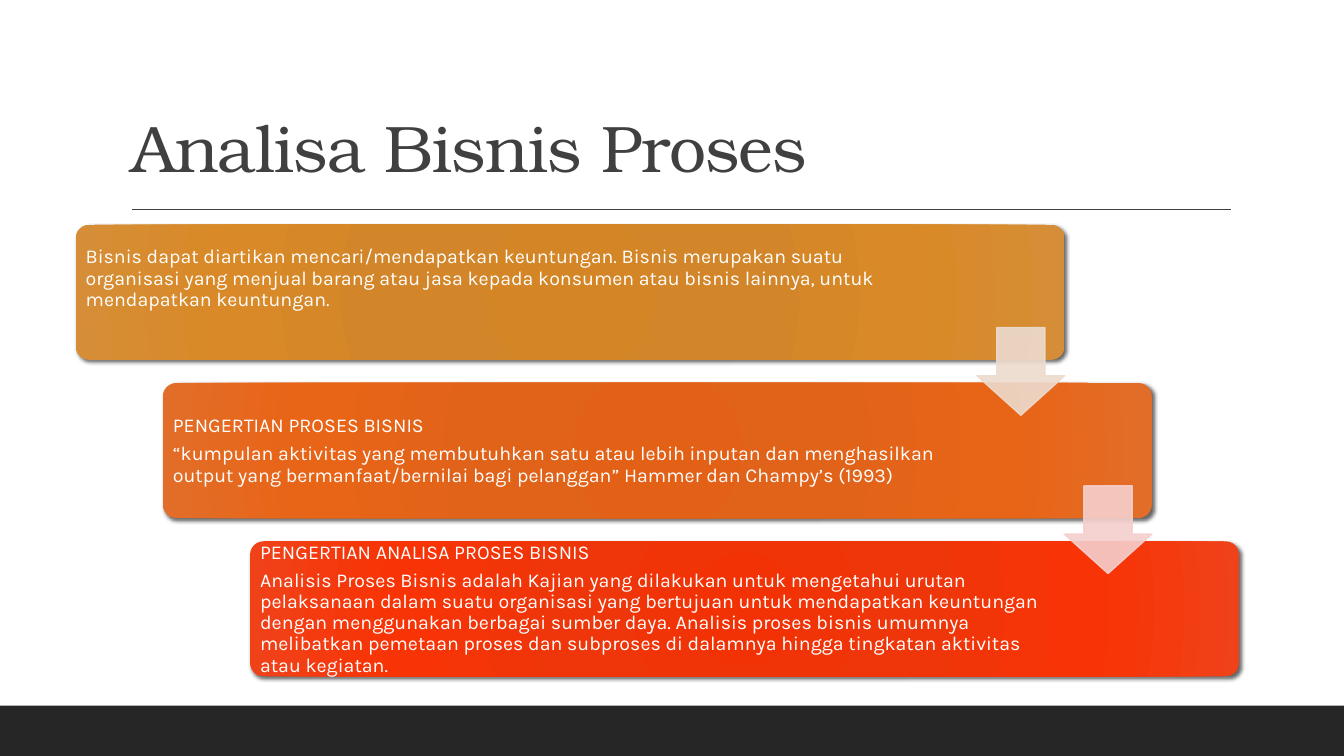
from pptx import Presentation
from pptx import util as u
from pptx.dml.color import RGBColor
from pptx.enum import shapes, text
from pptx.oxml import parse_xml
from pptx.oxml.ns import nsdecls, qn

WHITE = RGBColor(0xFF, 0xFF, 0xFF)
FOOTER_BAND = RGBColor(0x26, 0x26, 0x26)
TITLE_GREY = RGBColor(0x40, 0x40, 0x40)
AMBER = [RGBColor.from_string(c) for c in ("D48526", "D38629", "D98927", "D58E37")]
ORANGE = [RGBColor.from_string(c) for c in ("E36116", "E1631A", "E86416", "E26D28")]
RED = [RGBColor.from_string(c) for c in ("F23205", "EF360A", "F83305", "F04219")]
ARROW_COLORS = [RGBColor(0xED, 0xDB, 0xCE), RGBColor(0xF5, 0xCF, 0xCD)]
GRADIENT_STOPS = (0, 34, 70, 100)

TITLE_FONT, BODY_FONT = "TeX Gyre Bonum", "Karla"
CARD_WIDTH, CARD_HEIGHT = 9.81, 1.34
STEP_X, STEP_Y = 0.865, 1.57
ARROW_SIZE, ARROW_DROP = 0.87, 1.02
INSET = 0.06

# Card colours, text width, bottom inset, paragraphs
CARDS = [
    (AMBER, 8.36, 0.34, [
        "Bisnis dapat diartikan mencari/mendapatkan keuntungan. Bisnis merupakan suatu "
        "organisasi yang menjual barang atau jasa kepada konsumen atau bisnis lainnya, "
        "untuk mendapatkan keuntungan."]),
    (ORANGE, 8, INSET, [
        "PENGERTIAN PROSES BISNIS",
        "“kumpulan aktivitas yang membutuhkan satu atau lebih inputan dan menghasilkan "
        "output yang bermanfaat/bernilai bagi pelanggan” Hammer dan Champy’s (1993)"]),
    (RED, 8, INSET, [
        "PENGERTIAN ANALISA PROSES BISNIS",
        "Analisis Proses Bisnis adalah Kajian yang dilakukan untuk mengetahui urutan "
        "pelaksanaan dalam suatu organisasi yang bertujuan untuk mendapatkan keuntungan "
        "dengan menggunakan berbagai sumber daya. Analisis proses bisnis umumnya "
        "melibatkan pemetaan proses dan subproses di dalamnya hingga tingkatan aktivitas "
        "atau kegiatan."]),
]


def inches(*lengths):
    return [u.Inches(length) for length in lengths]


def add_radial_fill(shape, colors):
    stops = "".join(
        f'<a:gs pos="{position * 1000}"><a:srgbClr val="{color}"/></a:gs>'
        for position, color in zip(GRADIENT_STOPS, colors))
    gradient = parse_xml(
        f'<a:gradFill {nsdecls("a")} rotWithShape="1"><a:gsLst>{stops}</a:gsLst>'
        '<a:path path="circle"><a:fillToRect l="100000" t="100000" r="100000" b="100000"/>'
        '</a:path></a:gradFill>')
    shape._element.spPr.find(qn("a:prstGeom")).addnext(gradient)


def add_shadow(shape):
    shape._element.spPr.append(parse_xml(
        f'<a:effectLst {nsdecls("a")}><a:outerShdw blurRad="38100" dist="25400" '
        'dir="2700000" rotWithShape="0"><a:srgbClr val="000000"><a:alpha val="60000"/>'
        '</a:srgbClr></a:outerShdw></a:effectLst>'))


def add_frame(page, left, top, width, height):
    """Footer band, title and the rule beneath it."""
    band = page.shapes.add_shape(shapes.MSO_SHAPE.RECTANGLE,
                                 *inches(left, top + height - 0.5, width, 0.5))
    band.shadow.inherit = False
    band.fill.solid()
    band.fill.fore_color.rgb = FOOTER_BAND
    band.line.fill.background()

    rule = page.shapes.add_connector(
        shapes.MSO_CONNECTOR.STRAIGHT,
        *inches(left + 1.31, top + 2.08, left + 12.21, top + 2.08))
    rule.line.color.rgb = TITLE_GREY
    rule.line.width = u.Pt(1)
    rule._element.spPr.append(parse_xml(f'<a:effectLst {nsdecls("a")}/>'))

    title = page.shapes.title
    title.left, title.top, title.width, title.height = inches(left + 1.2, top + 0.31, 11, 1.59)
    frame = title.text_frame
    frame.text = "Analisa Bisnis Proses"
    frame.auto_size = text.MSO_AUTO_SIZE.NONE
    frame.vertical_anchor = text.MSO_ANCHOR.BOTTOM
    para = frame.paragraphs[0]
    para.alignment = text.PP_ALIGN.LEFT
    para.line_spacing = 0.9
    para.font.name, para.font.size = TITLE_FONT, u.Pt(47)
    para.font.color.rgb = TITLE_GREY
    para.runs[0]._r.get_or_add_rPr().set("spc", "-50")


def add_card(page, left, top, colors, text_width, bottom_inset, paragraphs):
    card = page.shapes.add_shape(shapes.MSO_SHAPE.ROUNDED_RECTANGLE,
                                 *inches(left, top, CARD_WIDTH, CARD_HEIGHT))
    card.adjustments[0] = 0.1
    add_radial_fill(card, colors)
    card.line.fill.background()
    add_shadow(card)

    box = page.shapes.add_textbox(*inches(left + 0.04, top + 0.04, text_width, 1.27))
    frame = box.text_frame
    frame.word_wrap = True
    frame.vertical_anchor = text.MSO_ANCHOR.MIDDLE
    frame.margin_left = frame.margin_right = frame.margin_top = u.Inches(INSET)
    frame.margin_bottom = u.Inches(bottom_inset)
    frame.text = "\n".join(paragraphs)
    for para in frame.paragraphs:
        para.line_spacing = 0.9
        para.space_after = u.Pt(4.9)
        para.font.name, para.font.size = BODY_FONT, u.Pt(14)
        para.font.color.rgb = WHITE


def add_arrow(page, left, top, color):
    arrow = page.shapes.add_shape(shapes.MSO_SHAPE.DOWN_ARROW,
                                  *inches(left, top, ARROW_SIZE, ARROW_SIZE))
    arrow.adjustments[0], arrow.adjustments[1] = 0.55, 0.45
    arrow.shadow.inherit = False
    arrow.fill.solid()
    arrow.fill.fore_color.rgb = color
    arrow.line.color.rgb = color
    arrow.line.width = u.Pt(1)
    for tint in arrow._element.spPr.iter(qn("a:srgbClr")):
        tint.append(parse_xml(f'<a:alpha {nsdecls("a")} val="90000"/>'))


def add_staircase(page, left, top):
    """Cards stepping down to the right, joined by arrows."""
    for index, card in enumerate(CARDS):
        add_card(page, left + index * STEP_X, top + index * STEP_Y, *card)
    for index, color in enumerate(ARROW_COLORS):
        add_arrow(page, left + CARD_WIDTH - ARROW_SIZE + index * STEP_X,
                  top + ARROW_DROP + index * STEP_Y, color)


def main():
    deck = Presentation()
    deck.slide_width, deck.slide_height = inches(13.33, 7.5)
    page = deck.slides.add_slide(deck.slide_layouts[5])
    add_frame(page, 0, 0, 13.33, 7.5)
    add_staircase(page, 0.75, 2.23)
    deck.save("out.pptx")


if __name__ == "__main__":
    main()
